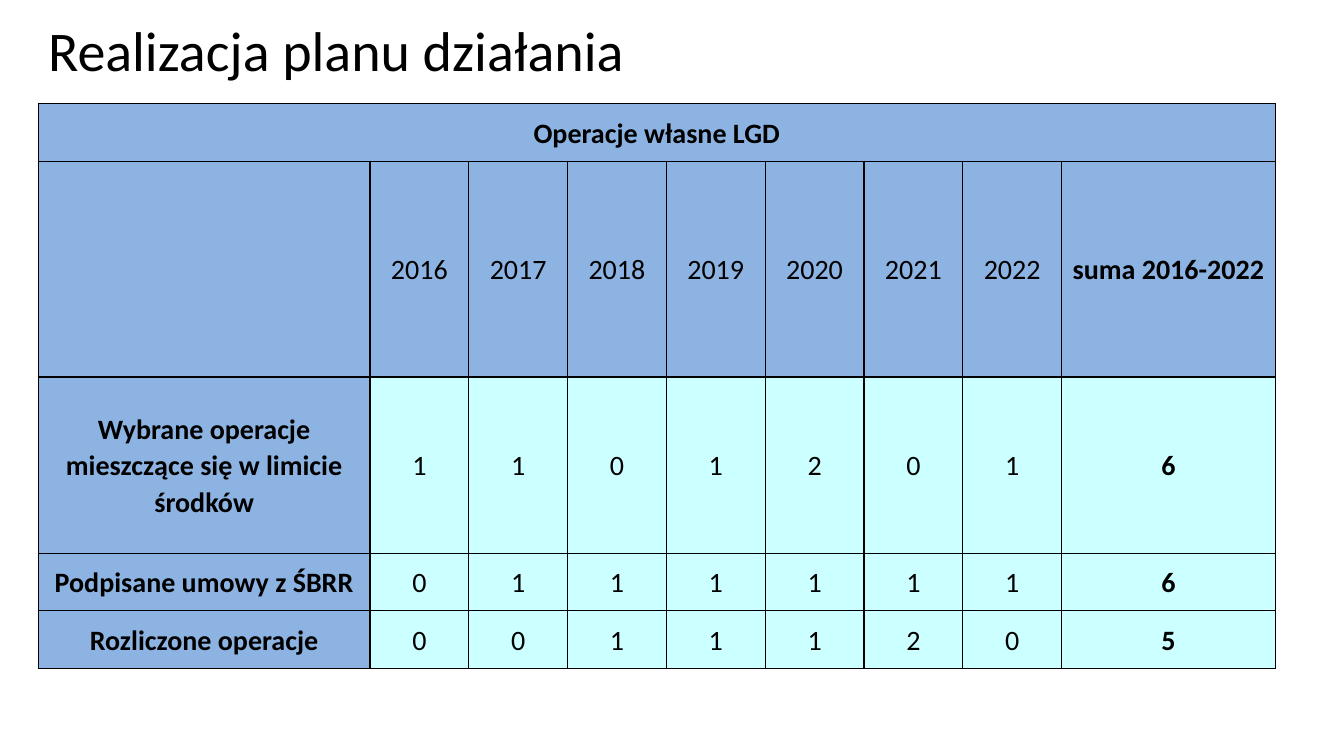
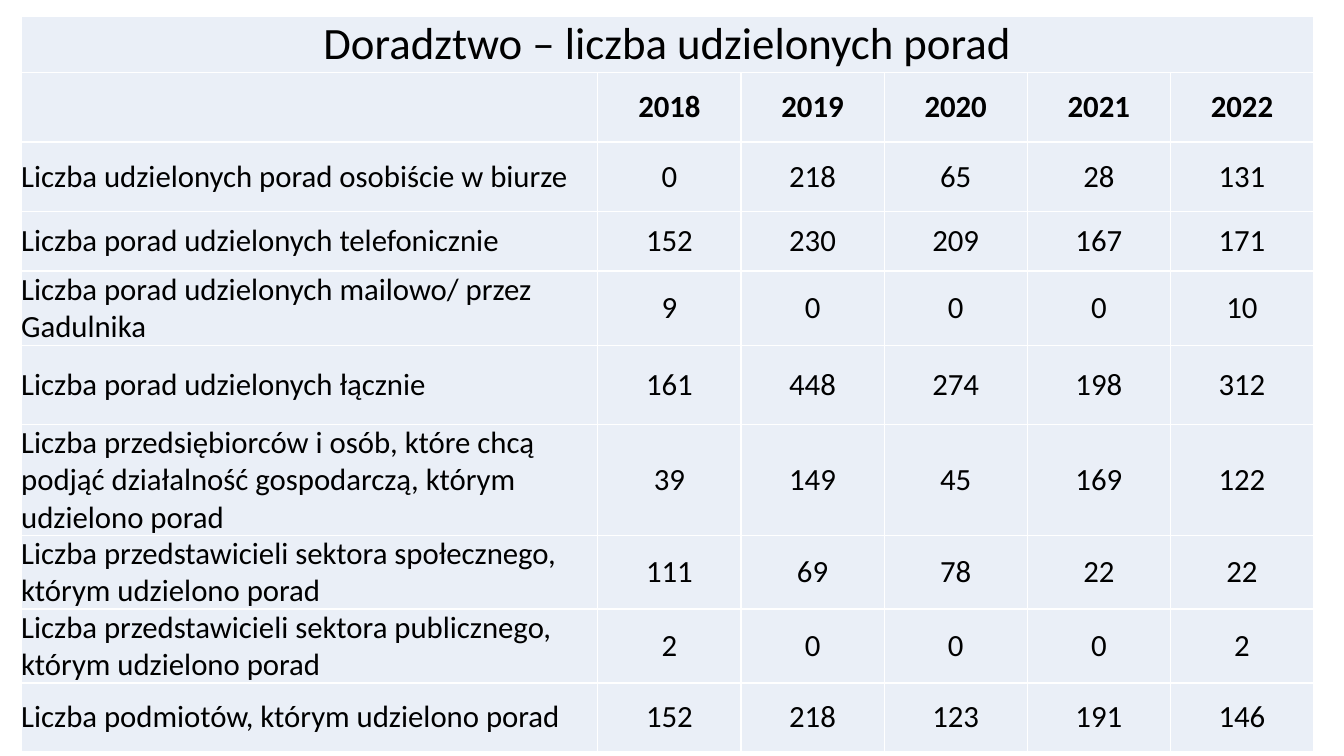
from collections.abc import Callable
from dataclasses import dataclass
from typing import Any

from lxml import etree
from pptx import Presentation
from pptx import dml, slide as sl, table as tb, util as u
from pptx.dml import color
from pptx.enum import text as tx
from pptx.oxml import ns


@dataclass(frozen=True)
class Theme:
    font: str = "Calibri"
    ink: str = "000000"
    white: str = "FFFFFF"
    blue: str = "8DB3E2"
    aqua: str = "CCFFFF"
    pale: str = "EAEFF7"
    title: int = 40
    head: int = 32
    large: int = 22
    body: int = 20
    rule: int = 1


@dataclass(frozen=True)
class Style:
    size: int
    bold: bool = False
    fill: str = Theme.pale
    align: tx.PP_ALIGN = tx.PP_ALIGN.CENTER


@dataclass(frozen=True)
class Grid:
    left: float
    top: float
    cols: list[float]
    rows: list[float]
    data: list[tuple]
    edge: str
    inset: float
    para: dict[str, Any]
    style: Callable[[int, int], Style]


THEME = Theme()


def apply(item: Any, values: dict[str, Any]) -> None:
    for name, value in values.items():
        setattr(item, name, value)


def write(frame: Any, words: str, size: int, bold: bool, para: dict[str, Any]) -> None:
    line = frame.paragraphs[0]
    apply(line, para)
    run = line.add_run()
    run.text = words
    apply(run.font, {"name": THEME.font, "size": u.Pt(size), "bold": bold})
    run.font.color.rgb = color.RGBColor.from_string(THEME.ink)


def border(cell: tb._Cell, hue: str) -> None:
    props = cell._tc.get_or_add_tcPr()
    for spot, side in enumerate(("lnL", "lnR", "lnT", "lnB")):
        line = etree.Element(ns.qn(f"a:{side}"), w=str(u.Pt(THEME.rule)))
        fill = etree.SubElement(line, ns.qn("a:solidFill"))
        etree.SubElement(fill, ns.qn("a:srgbClr"), val=hue)
        props.insert(spot, line)


def add_grid(page: sl.Slide, grid: Grid) -> None:
    frame = page.shapes.add_table(
        len(grid.rows), len(grid.cols), u.Inches(grid.left), u.Inches(grid.top),
        u.Inches(sum(grid.cols)), u.Inches(sum(grid.rows)))
    table = frame.table
    apply(table, {"first_row": False, "horz_banding": False})
    for col, width in zip(table.columns, grid.cols):
        col.width = u.Inches(width)
    for row, height in zip(table.rows, grid.rows):
        row.height = u.Inches(height)
    table.cell(0, 0).merge(table.cell(0, len(grid.cols) - 1))
    side = u.Inches(grid.inset)
    shape = {"margin_left": side, "margin_right": side, "margin_top": 0,
             "margin_bottom": 0, "vertical_anchor": tx.MSO_ANCHOR.MIDDLE}
    for r in range(len(grid.rows)):
        for c in range(len(grid.cols)):
            cell, style = table.cell(r, c), grid.style(r, c)
            apply(cell, shape)
            cell.fill.solid()
            cell.fill.fore_color.rgb = color.RGBColor.from_string(style.fill)
            border(cell, grid.edge)
            words = str(grid.data[r][c]) if c < len(grid.data[r]) else ""
            if words:
                write(cell.text_frame, words, style.size, style.bold,
                      {**grid.para, "alignment": style.align})


def add_title(page: sl.Slide, words: str) -> None:
    box = page.shapes.add_textbox(*map(u.Inches, (0.38, 0.03, 11.5, 1)))
    apply(box.text_frame, {"word_wrap": True, "vertical_anchor": tx.MSO_ANCHOR.MIDDLE})
    write(box.text_frame, words, THEME.title, False, {"line_spacing": 0.9})


def plan_style(r: int, c: int) -> Style:
    return Style(THEME.body, r == 0 or c in (0, 8),
                 THEME.blue if r < 2 or c == 0 else THEME.aqua)


def advice_style(r: int, c: int) -> Style:
    if r == 0:
        return Style(THEME.head)
    align = tx.PP_ALIGN.LEFT if c == 0 else tx.PP_ALIGN.CENTER
    return Style(THEME.large, r == 1, align=align)


PLAN = Grid(
    0.38, 1.03, [3.29] + [0.98] * 7 + [2.12], [0.57, 2.14, 1.75, 0.57, 0.57],
    [
        ("Operacje własne LGD",),
        ("", *range(2016, 2023), "suma 2016-2022"),
        ("Wybrane operacje mieszczące się w limicie środków", 1, 1, 0, 1, 2, 0, 1, 6),
        ("Podpisane umowy z ŚBRR", 0, 1, 1, 1, 1, 1, 1, 6),
        ("Rozliczone operacje", 0, 0, 1, 1, 1, 2, 0, 5),
    ],
    THEME.ink, 0.02, {"line_spacing": 1.07, "space_after": u.Pt(8)}, plan_style)

ADVICE = Grid(
    0.21, 0.16, [5.72] + [1.42] * 5,
    [0.56, 0.69, 0.69, 0.59, 0.74, 0.78, 1, 0.7, 0.68, 0.68],
    [
        ("Doradztwo – liczba udzielonych porad",),
        ("", *range(2018, 2023)),
        ("Liczba udzielonych porad osobiście w biurze", 0, 218, 65, 28, 131),
        ("Liczba porad udzielonych telefonicznie", 152, 230, 209, 167, 171),
        ("Liczba porad udzielonych mailowo/ przez Gadulnika", 9, 0, 0, 0, 10),
        ("Liczba porad udzielonych łącznie", 161, 448, 274, 198, 312),
        ("Liczba przedsiębiorców i osób, które chcą podjąć działalność gospodarczą, "
         "którym udzielono porad", 39, 149, 45, 169, 122),
        ("Liczba przedstawicieli sektora społecznego, którym udzielono porad",
         111, 69, 78, 22, 22),
        ("Liczba przedstawicieli sektora publicznego, którym udzielono porad",
         2, 0, 0, 0, 2),
        ("Liczba podmiotów, którym udzielono porad", 152, 218, 123, 191, 146),
    ],
    THEME.white, 0, {}, advice_style)


def main() -> None:
    deck = Presentation()
    apply(deck, {"slide_width": u.Inches(13.33), "slide_height": u.Inches(7.5)})
    blank = deck.slide_layouts[6]
    for title, grid in (("Realizacja planu działania", PLAN), ("", ADVICE)):
        page = deck.slides.add_slide(blank)
        if title:
            add_title(page, title)
        add_grid(page, grid)
    deck.save("out.pptx")


if __name__ == "__main__":
    main()
